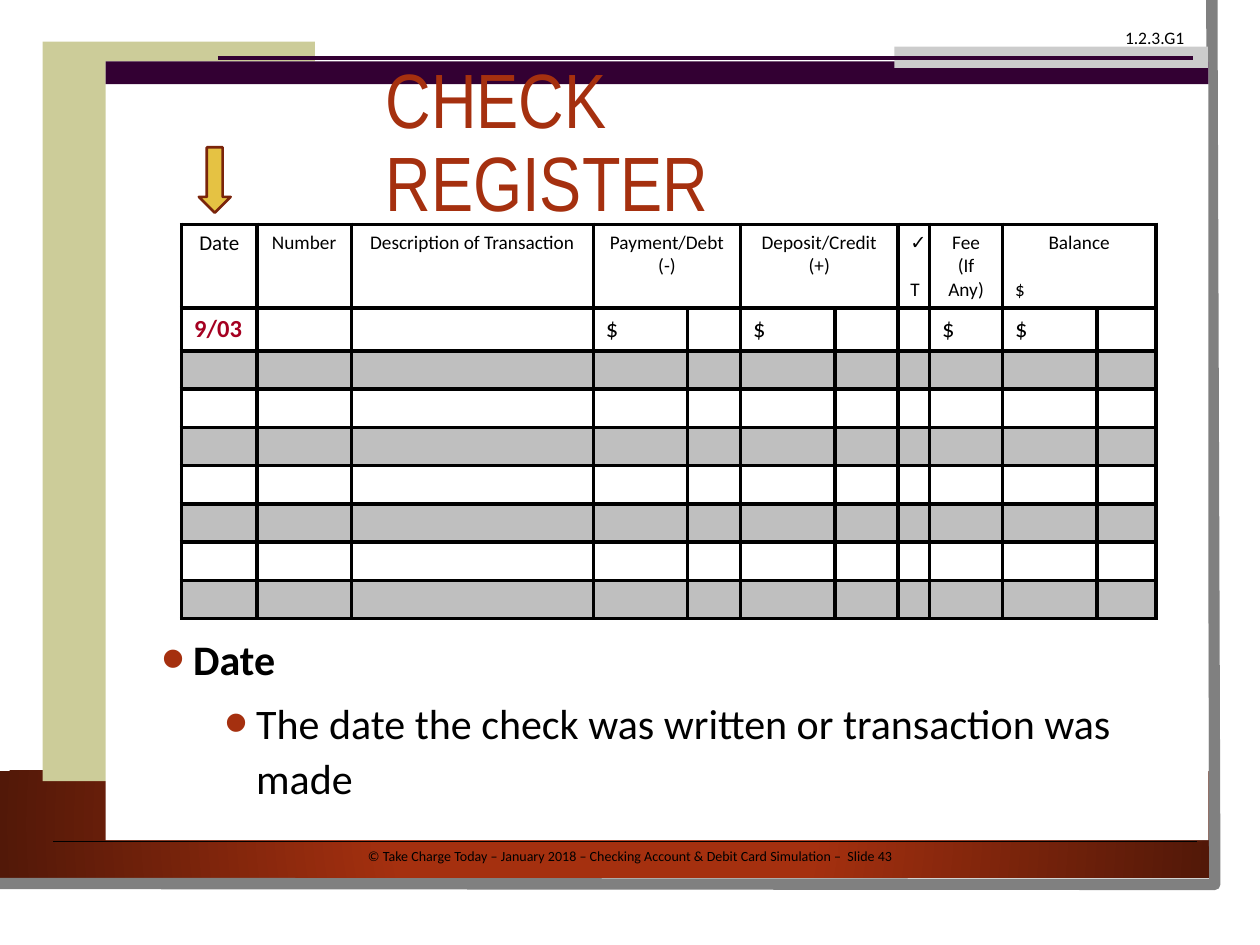
"""Build the check register slide that explains the Date column."""
from typing import NamedTuple

from lxml import etree
from pptx import Presentation
from pptx.dml.color import RGBColor
from pptx.enum.shapes import MSO_CONNECTOR, MSO_SHAPE
from pptx.enum.text import MSO_ANCHOR, MSO_AUTO_SIZE, PP_ALIGN
from pptx.oxml.ns import qn
from pptx.util import Cm, Pt

RECTANGLE, DOWN_ARROW = MSO_SHAPE.RECTANGLE, MSO_SHAPE.DOWN_ARROW
STRAIGHT = MSO_CONNECTOR.STRAIGHT
LEFT, CENTER = PP_ALIGN.LEFT, PP_ALIGN.CENTER
MIDDLE, NO_AUTOFIT = MSO_ANCHOR.MIDDLE, MSO_AUTO_SIZE.NONE

BLACK = RGBColor(0x00, 0x00, 0x00)
WHITE = RGBColor(0xFF, 0xFF, 0xFF)
RUST = RGBColor(0xA5, 0x30, 0x0F)
DARK_RUST = RGBColor(0x52, 0x18, 0x08)
ARROW_EDGE = RGBColor(0x7A, 0x24, 0x0B)
GOLD = RGBColor(0xE5, 0xC2, 0x43)
KHAKI = RGBColor(0xCC, 0xCC, 0x99)
PLUM = RGBColor(0x33, 0x00, 0x33)
PALE_GRAY = RGBColor(0xCC, 0xCC, 0xCC)
EDGE_GRAY = RGBColor(0x80, 0x80, 0x80)
STRIPE_GRAY = RGBColor(0xBF, 0xBF, 0xBF)
CRIMSON = RGBColor(0xA5, 0x00, 0x21)


class Box(NamedTuple):
    left: float
    top: float
    width: float
    height: float

    def lengths(self) -> list:
        return [Cm(value) for value in self]


class Panel(NamedTuple):
    box: Box
    color: RGBColor


class Rule(NamedTuple):
    start: float
    end: float
    top: float
    color: RGBColor
    weight: float


class Entry(NamedTuple):
    row: int
    column: int
    lines: tuple
    size: float = 11
    align: PP_ALIGN = CENTER
    color: RGBColor = BLACK
    bold: bool = False
    span: int = 1
    last_gap: float = 0
    last_align: PP_ALIGN = CENTER


class Bullet(NamedTuple):
    text: str
    level: int
    margin: float
    gap: float
    bold: bool


PANELS = [
    Panel(Box(0.86, 0.84, 5.49, 14.91), KHAKI),
    Panel(Box(2.13, 1.24, 22.23, 15.7), WHITE),
    Panel(Box(2.13, 1.24, 22.23, 0.46), PLUM),
    Panel(Box(18.03, 0.94, 6.32, 0.43), PALE_GRAY),
]
RULES = [Rule(4.39, 24.05, 1.17, PLUM, 2), Rule(1.07, 24.13, 16.97, BLACK, 0.75)]
COLUMN_WIDTHS = [1.52, 1.9, 4.88, 1.9, 1.07, 1.9, 1.27, 0.64, 1.47, 1.9, 1.19]
ROW_HEIGHTS = [1.68, 0.86] + [0.77] * 7
ENTRIES = [
    Entry(0, 0, ("Date",), size=12),
    Entry(0, 1, ("Number",)),
    Entry(0, 2, ("Description of Transaction",)),
    Entry(0, 3, ("Payment/Debt", "(-)"), span=2),
    Entry(0, 5, ("Deposit/Credit", "(+)"), span=2),
    Entry(0, 7, ("✓", "T"), last_gap=13.4),
    Entry(0, 8, ("Fee (If Any)",)),
    Entry(0, 9, ("Balance", "$"), span=2, last_gap=13.4, last_align=LEFT),
    Entry(1, 0, ("9/03",), size=14, align=LEFT, color=CRIMSON, bold=True),
    *(Entry(1, column, ("$",), size=14, align=LEFT) for column in (3, 5, 8, 9)),
]
BULLETS = [
    Bullet("Date", 0, 0.64, 0, True),
    Bullet("The date the check was written or transaction was made", 1, 1.91, 5, False),
]


def style(paragraph, size: float, color: RGBColor = BLACK, face: str = "Calibri", bold: bool = False) -> None:
    for run in paragraph.runs:
        run.font.size, run.font.name, run.font.bold = Pt(size), face, bold
        run.font.color.rgb = color


def add_panel(slide, panel: Panel, preset: MSO_SHAPE = RECTANGLE):
    shape = slide.shapes.add_shape(preset, *panel.box.lengths())
    shape.shadow.inherit = False
    shape.fill.solid()
    shape.fill.fore_color.rgb = panel.color
    shape.line.fill.background()
    return shape


def add_footer_band(slide) -> None:
    band = add_panel(slide, Panel(Box(0, 15.54, 24.38, 2.16), RUST))
    band.fill.gradient()
    for stop, color, position in zip(band.fill.gradient_stops, (RUST, DARK_RUST), (0.34, 1)):
        stop.color.rgb, stop.position = color, position
    linear = band.element.spPr.find(".//" + qn("a:lin"))
    radial = etree.Element(qn("a:path"), path="circle")
    etree.SubElement(radial, qn("a:fillToRect"), l="50000", t="50000", r="50000", b="50000")
    linear.getparent().replace(linear, radial)


def add_page_edge(slide) -> None:
    builder = slide.shapes.build_freeform(Cm(24.43), 0)
    builder.add_line_segments([(Cm(24.49), Cm(17.83)), (0, Cm(17.81))], close=False)
    edge = builder.convert_to_shape()
    edge.shadow.inherit = False
    edge.fill.background()
    edge.line.color.rgb, edge.line.width = EDGE_GRAY, Pt(6.5)


def add_rule(slide, rule: Rule) -> None:
    line = slide.shapes.add_connector(STRAIGHT, Cm(rule.start), Cm(rule.top), Cm(rule.end), Cm(rule.top))
    line.line.color.rgb, line.line.width = rule.color, Pt(rule.weight)
    etree.SubElement(line.element.spPr, qn("a:effectLst"))


def add_label(slide, box: Box, text: str, size: float, align: PP_ALIGN) -> None:
    frame = slide.shapes.add_textbox(*box.lengths()).text_frame
    frame.word_wrap = True
    frame.text = text
    frame.paragraphs[0].alignment = align
    style(frame.paragraphs[0], size)


def place(placeholder, box: Box):
    placeholder.left, placeholder.top, placeholder.width, placeholder.height = box.lengths()
    placeholder.element.getparent().append(placeholder.element)
    frame = placeholder.text_frame
    frame.vertical_anchor, frame.auto_size, frame.word_wrap = MIDDLE, NO_AUTOFIT, True
    return frame


def fill_bullets(frame) -> None:
    frame.text = "\n".join(bullet.text for bullet in BULLETS)
    for paragraph, bullet in zip(frame.paragraphs, BULLETS):
        properties = paragraph._p.get_or_add_pPr()
        properties.set("marL", str(Cm(bullet.margin)))
        properties.set("indent", str(-Cm(0.64)))
        color = etree.SubElement(properties, qn("a:buClr"))
        etree.SubElement(color, qn("a:srgbClr"), val=str(RUST))
        etree.SubElement(properties, qn("a:buSzPct"), val="160000")
        etree.SubElement(properties, qn("a:buFont"), typeface="Arial")
        etree.SubElement(properties, qn("a:buChar"), char="•")
        paragraph.level, paragraph.line_spacing = bullet.level, 1.1
        paragraph.space_before = Pt(bullet.gap)
        style(paragraph, 24, bold=bullet.bold)


def format_cell(cell, color: RGBColor) -> None:
    properties = cell._tc.get_or_add_tcPr()
    for side in ("lnL", "lnR", "lnT", "lnB"):
        border = etree.SubElement(properties, qn(f"a:{side}"), w=str(Pt(2.25)))
        ink = etree.SubElement(border, qn("a:solidFill"))
        etree.SubElement(ink, qn("a:srgbClr"), val=str(BLACK))
    cell.fill.solid()
    cell.fill.fore_color.rgb = color
    etree.SubElement(cell.text_frame.paragraphs[0]._p, qn("a:endParaRPr"), sz="1200")


def fill_entry(register, entry: Entry) -> None:
    cell = register.cell(entry.row, entry.column)
    if entry.span > 1:
        cell.merge(register.cell(entry.row, entry.column + entry.span - 1))
    cell.text_frame.text = "\n".join(entry.lines)
    paragraphs = cell.text_frame.paragraphs
    for paragraph in paragraphs:
        paragraph.alignment = entry.align
        style(paragraph, entry.size, entry.color, bold=entry.bold)
    if entry.last_gap:
        paragraphs[-1].space_before = Pt(entry.last_gap)
        paragraphs[-1].alignment = entry.last_align


def add_register(slide) -> None:
    box = Box(3.66, 4.52, sum(COLUMN_WIDTHS), sum(ROW_HEIGHTS))
    register = slide.shapes.add_table(len(ROW_HEIGHTS), len(COLUMN_WIDTHS), *box.lengths()).table
    register.first_row = register.horz_banding = False
    for column, width in zip(register.columns, COLUMN_WIDTHS):
        column.width = Cm(width)
    for index, (row, height) in enumerate(zip(register.rows, ROW_HEIGHTS)):
        row.height = Cm(height)
        for cell in row.cells:
            format_cell(cell, STRIPE_GRAY if index and index % 2 == 0 else WHITE)
    for entry in ENTRIES:
        fill_entry(register, entry)


def main() -> None:
    deck = Presentation()
    deck.slide_width, deck.slide_height = Cm(25.4), Cm(19.05)
    slide = deck.slides.add_slide(deck.slide_layouts[1])
    add_footer_band(slide)
    add_page_edge(slide)
    for panel in PANELS:
        add_panel(slide, panel)
    for rule in RULES:
        add_rule(slide, rule)
    copyright_line = "© Take Charge Today – January 2018 – Checking Account & Debit Card Simulation –  Slide 43"
    add_label(slide, Box(1.07, 16.97, 23.29, 0.61), copyright_line, 8, CENTER)
    add_label(slide, Box(22.43, 0.43, 1.9, 0.69), "1.2.3.G1", 10, LEFT)
    heading = place(slide.shapes.title, Box(7.52, 1.55, 11.23, 2.74))
    heading.text = "CHECK REGISTER"
    heading.paragraphs[0].alignment, heading.paragraphs[0].line_spacing = LEFT, 0.9
    style(heading.paragraphs[0], 44, RUST, "Arial Narrow")
    fill_bullets(place(slide.placeholders[1], Box(3, 12.5, 20.32, 3.86)))
    date_arrow = add_panel(slide, Panel(Box(4.01, 2.97, 0.64, 1.32), GOLD), DOWN_ARROW)
    date_arrow.line.color.rgb, date_arrow.line.width = ARROW_EDGE, Pt(1.5)
    add_register(slide)
    deck.save("out.pptx")


if __name__ == "__main__":
    main()
